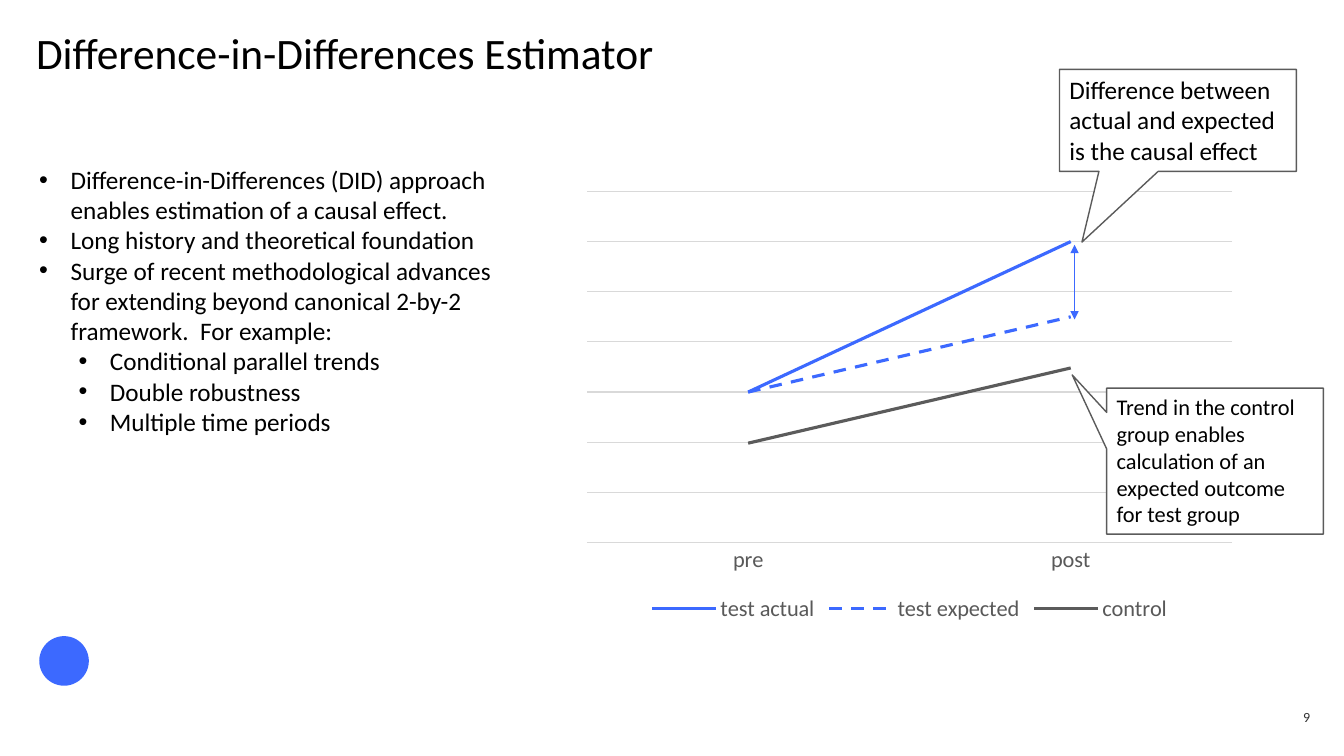
from lxml import etree
from pptx import Presentation
from pptx.chart.data import CategoryChartData
from pptx.dml.color import RGBColor
from pptx.enum.chart import XL_CHART_TYPE as CT, XL_LEGEND_POSITION as LP
from pptx.enum.chart import XL_TICK_LABEL_POSITION as TLP, XL_TICK_MARK as TM
from pptx.enum.dml import MSO_LINE
from pptx.enum.shapes import MSO_CONNECTOR, MSO_SHAPE
from pptx.enum.text import MSO_ANCHOR, PP_ALIGN
from pptx.oxml import parse_xml
from pptx.oxml.ns import nsdecls, qn
from pptx.util import Cm, Pt

BLACK = RGBColor(0, 0, 0)
WHITE = RGBColor(0xFF, 0xFF, 0xFF)
BLUE = RGBColor(0x3C, 0x69, 0xFF)
GRAY = RGBColor(0x5B, 0x5B, 0x5B)
LABEL = RGBColor(0x59, 0x59, 0x59)
GRID = RGBColor(0xD9, 0xD9, 0xD9)
DARK = RGBColor(0x32, 0x32, 0x32)

BULLETS = [
    (0, "Difference-in-Differences (DID) approach enables estimation of a causal effect."),
    (0, "Long history and theoretical foundation"),
    (0, "Surge of recent methodological advances for extending beyond canonical "
        "2-by-2 framework.  For example:"),
    (1, "Conditional parallel trends"),
    (1, "Double robustness"),
    (1, "Multiple time periods"),
]
SERIES = [
    ("test actual", (50, 100), BLUE, MSO_LINE.SOLID),
    ("test expected", (50, 75), BLUE, MSO_LINE.DASH),
    ("control", (33, 58), GRAY, MSO_LINE.SOLID),
]
PLOT_AREA = {"x": 0.02, "y": 0.02, "w": 0.96, "h": 0.79}
GRID_STEP = 16.67


class Deck:
    font = "Calibri"

    def __init__(self, prs):
        self.s = prs.slides.add_slide(prs.slide_layouts[6])

    def style(self, font, size, color):
        font.name, font.size, font.color.rgb = self.font, Pt(size), color

    def run(self, p, text, size, color=BLACK):
        r = p.add_run()
        r.text = text
        self.style(r.font, size, color)

    def box(self, x, y, w, h):
        tf = self.s.shapes.add_textbox(Cm(x), Cm(y), Cm(w), Cm(h)).text_frame
        tf.word_wrap = True
        tf.margin_left = tf.margin_right = tf.margin_top = tf.margin_bottom = 0
        return tf

    def text(self, x, y, w, h, text, size, color=BLACK, align=PP_ALIGN.LEFT,
             anchor=MSO_ANCHOR.TOP, spacing=1.0):
        tf = self.box(x, y, w, h)
        tf.vertical_anchor = anchor
        p = tf.paragraphs[0]
        p.alignment, p.line_spacing = align, spacing
        self.run(p, text, size, color)

    def bullets(self, x, y, w, h, items, size):
        tf = self.box(x, y, w, h)
        for i, (level, text) in enumerate(items):
            p = tf.add_paragraph() if i else tf.paragraphs[0]
            p.level = level
            pPr = p._p.get_or_add_pPr()
            pPr.set("marL", str(Cm(0.79 + level * 0.99)))
            pPr.set("indent", str(-Cm(0.79)))
            etree.SubElement(pPr, qn("a:buFont")).set("typeface", "Arial")
            etree.SubElement(pPr, qn("a:buChar")).set("char", "•")
            self.run(p, text, size)

    def shape(self, kind, x, y, w, h, fill, line=None):
        sp = self.s.shapes.add_shape(kind, Cm(x), Cm(y), Cm(w), Cm(h))
        sp.shadow.inherit = False
        sp.fill.solid()
        sp.fill.fore_color.rgb = fill
        if line is None:
            sp.line.fill.background()
        else:
            sp.line.color.rgb, sp.line.width = line, Pt(1)
        return sp

    def callout(self, x, y, w, h, tip, text, size):
        sp = self.shape(MSO_SHAPE.RECTANGULAR_CALLOUT, x, y, w, h, WHITE, GRAY)
        sp.adjustments[0], sp.adjustments[1] = tip
        tf = sp.text_frame
        tf.word_wrap, tf.vertical_anchor = True, MSO_ANCHOR.TOP
        p = tf.paragraphs[0]
        p.alignment = PP_ALIGN.LEFT
        self.run(p, text, size)

    def double_arrow(self, x1, y1, x2, y2, color):
        c = self.s.shapes.add_connector(
            MSO_CONNECTOR.STRAIGHT, Cm(x1), Cm(y1), Cm(x2), Cm(y2))
        c.line.color.rgb, c.line.width = color, Pt(0.5)
        ln = c.line._get_or_add_ln()
        for end in ("a:headEnd", "a:tailEnd"):
            etree.SubElement(ln, qn(end)).set("type", "triangle")
        etree.SubElement(c._element.spPr, qn("a:effectLst"))

    def line_chart(self, x, y, w, h, categories, series, size):
        data = CategoryChartData()
        data.categories = categories
        for name, values, _, _ in series:
            data.add_series(name, values)
        chart = self.s.shapes.add_chart(
            CT.LINE, Cm(x), Cm(y), Cm(w), Cm(h), data).chart
        self.style(chart.font, size, LABEL)
        chart.has_title = False
        chart.has_legend = True
        chart.legend.position = LP.BOTTOM
        chart.legend.include_in_layout = False
        self.style(chart.legend.font, size, LABEL)
        plot = chart.plots[0]
        plot.vary_by_categories = False
        for ser, (_, _, color, dash) in zip(plot.series, series):
            ser.smooth = False
            line = ser.format.line
            line.color.rgb, line.width, line.dash_style = color, Pt(2.25), dash
        cat, val = chart.category_axis, chart.value_axis
        for axis in (cat, val):
            axis.major_tick_mark = axis.minor_tick_mark = TM.NONE
            self.style(axis.tick_labels.font, size, LABEL)
        val.tick_label_position = TLP.NONE
        val.minimum_scale, val.maximum_scale = 0, 7 * GRID_STEP
        val.major_unit = GRID_STEP
        val.format.line.fill.background()
        val.has_major_gridlines = True
        for line in (cat.format.line, val.major_gridlines.format.line):
            line.color.rgb, line.width = GRID, Pt(0.75)
        self.place_plot(chart)

    def place_plot(self, chart):
        area = chart._chartSpace.chart.plotArea
        for old in area.findall(qn("c:layout")):
            area.remove(old)
        modes = "".join(f'<c:{k}Mode val="edge"/>' for k in "xy")
        sizes = "".join(f'<c:{k} val="{v}"/>' for k, v in PLOT_AREA.items())
        area.insert(0, parse_xml(
            f'<c:layout {nsdecls("c")}><c:manualLayout>'
            f'<c:layoutTarget val="inner"/>{modes}{sizes}'
            '</c:manualLayout></c:layout>'))


def main():
    prs = Presentation()
    prs.slide_width, prs.slide_height = Cm(33.87), Cm(19.05)
    d = Deck(prs)
    d.shape(MSO_SHAPE.OVAL, 0.99, 16.03, 1.25, 1.25, BLUE)
    d.text(0.91, 0.81, 32.11, 2.82, "Difference-in-Differences Estimator", 31, spacing=0.9)
    d.text(31.85, 17.78, 1.17, 0.51, "9", 10, DARK, PP_ALIGN.RIGHT, MSO_ANCHOR.BOTTOM)
    d.line_chart(14.45, 4.6, 16.94, 11.2, ("pre", "post"), SERIES, 16)
    d.callout(26.7, 1.75, 5.97, 2.57, (-0.405, 1.193),
              "Difference between actual and expected is the causal effect", 18)
    d.double_arrow(27.08, 6.17, 27.08, 8.05, BLUE)
    d.callout(27.89, 9.78, 5.46, 3.68, (-0.659, -0.59),
              "Trend in the control group enables calculation of an expected "
              "outcome for test group", 16)
    d.bullets(0.99, 4.14, 11.94, 11.81, BULLETS, 18)
    prs.save("out.pptx")


if __name__ == "__main__":
    main()
